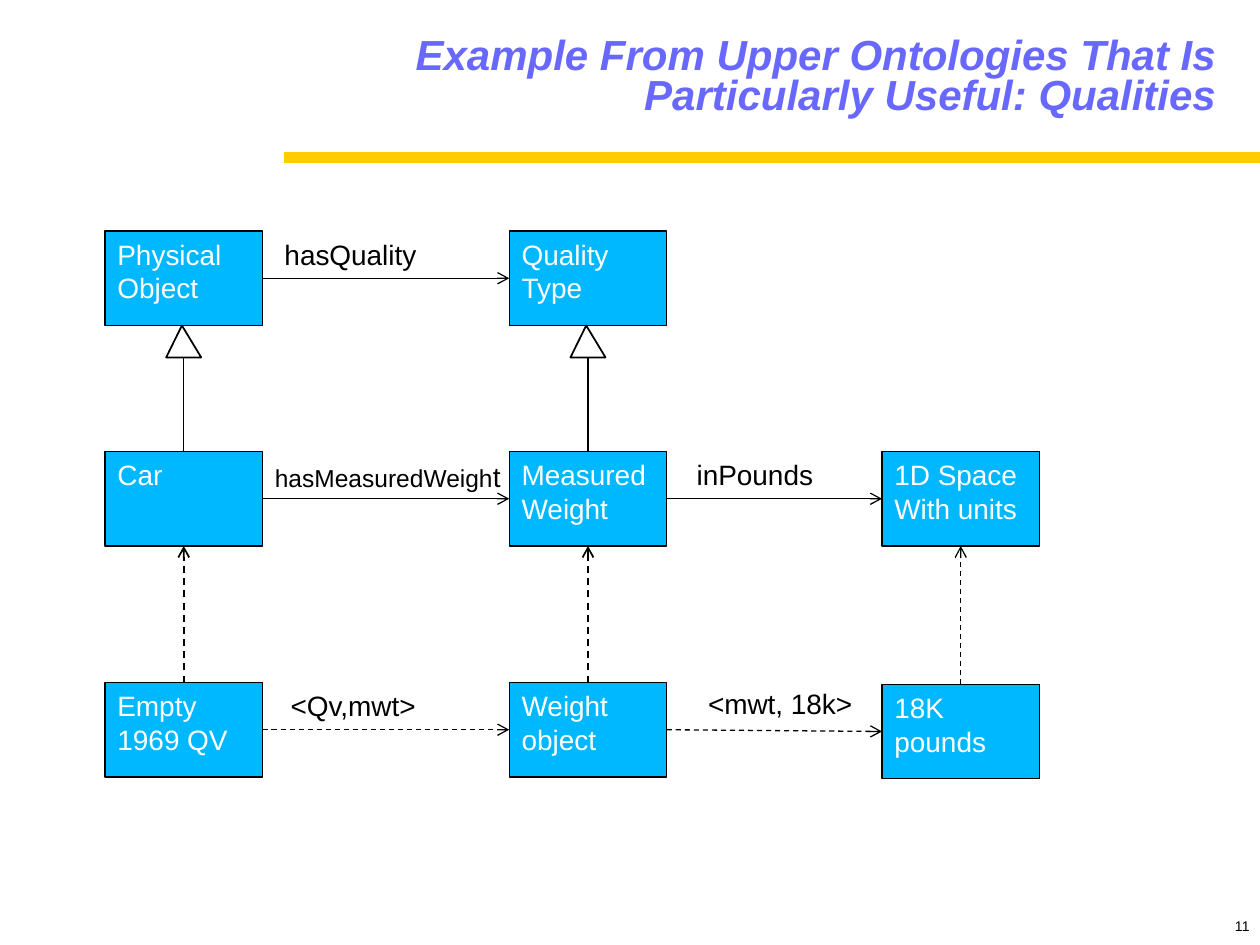
from lxml import etree
from pptx import Presentation
from pptx import util as u
from pptx.dml import color
from pptx.enum import dml, shapes, text
from pptx.oxml import ns

Pt = u.Pt
BOX_W, BOX_H = 90, 54
COLS = (0, 231, 444)
ROWS = (0, 126, 258)
BOXES = {
    (0, 0): "Physical Object",
    (0, 1): "Quality\nType",
    (1, 0): "Car",
    (1, 1): "Measured\nWeight",
    (1, 2): "1D Space\nWith units",
    (2, 0): "Empty 1969 QV",
    (2, 1): "Weight object",
    (2, 2): "18K pounds",
}
LABELS = [
    (95.5, 0, 91, [("hasQuality", 16)]),
    (90, 127, 144, [("hasMeasuredWeigh", 14), ("t", 16)]),
    (331, 126, 81, [("inPounds", 16)]),
    (99, 258, 89, [("<Qv,mwt>", 16)]),
    (337.5, 257, 101.5, [("<mwt, 18k>", 16)]),
]


def rgb(value):
    return color.RGBColor.from_string(value)


def write(p, content, size=16, fill="000000", bold=False, italic=False):
    r = p.add_run()
    r.text = content
    r.font.name = "Arial"
    r.font.size = Pt(size)
    r.font.bold = bold
    r.font.italic = italic
    r.font.color.rgb = rgb(fill)


def add_frame(s, x, y, w, h, wrap=True, anchor=text.MSO_ANCHOR.TOP):
    tf = s.shapes.add_textbox(Pt(x), Pt(y), Pt(w), Pt(h)).text_frame
    tf.word_wrap = wrap
    tf.vertical_anchor = anchor
    return tf


def add_line(s, start, end, width=0.75, stroke="000000", dash=False, arrow=False):
    points = [Pt(v) for v in (*start, *end)]
    sp = s.shapes.add_connector(shapes.MSO_CONNECTOR.STRAIGHT, *points)
    sp.line.width = Pt(width)
    sp.line.color.rgb = rgb(stroke)
    if dash:
        sp.line.dash_style = dml.MSO_LINE.DASH
    if arrow:
        tail = etree.SubElement(sp.line._get_or_add_ln(), ns.qn("a:tailEnd"))
        tail.set("type", "arrow")
    etree.SubElement(sp._element.spPr, ns.qn("a:effectLst"))


def style(sp, fill, width):
    sp.shadow.inherit = False
    sp.fill.solid()
    sp.fill.fore_color.rgb = rgb(fill)
    sp.line.color.rgb = rgb("000000")
    sp.line.width = Pt(width)


def add_box(s, x, y, content):
    sp = s.shapes.add_shape(shapes.MSO_SHAPE.RECTANGLE, Pt(x), Pt(y), Pt(BOX_W), Pt(BOX_H))
    style(sp, "00B8FF", 0.75)
    tf = sp.text_frame
    tf.word_wrap = True
    tf.vertical_anchor = text.MSO_ANCHOR.TOP
    for i, part in enumerate(content.split("\n")):
        p = tf.paragraphs[0] if i == 0 else tf.add_paragraph()
        p.alignment = text.PP_ALIGN.LEFT
        write(p, part, fill="FFFFFF")


def add_inheritance(s, x, top, bottom):
    base = top + 18.25
    add_line(s, (x, base), (x, bottom))
    fb = s.shapes.build_freeform(Pt(x - 1), Pt(top))
    fb.add_line_segments([(Pt(x + 10), Pt(base)), (Pt(x - 10), Pt(base))], close=True)
    style(fb.convert_to_shape(), "FFFFFF", 1)


def add_header(s, x, y, w, h):
    add_line(s, (x + w + 18, y + 84), (x, y + 84), width=6, stroke="FFCC00")
    p = add_frame(s, x, y, w, h, anchor=text.MSO_ANCHOR.MIDDLE).paragraphs[0]
    p.alignment = text.PP_ALIGN.RIGHT
    p.line_spacing = 0.8
    write(p, "Example From Upper Ontologies That Is Particularly Useful: Qualities",
          size=24, fill="6868FF", bold=True, italic=True)


def add_diagram(s, x, y):
    at = {(r, c): (x + COLS[c], y + ROWS[r] + (r == c == 2)) for r, c in BOXES}
    for key, content in BOXES.items():
        add_box(s, *at[key], content)
    for (r, c), (left, top) in at.items():
        mid = left + BOX_W / 2
        if (r, c + 1) in at:
            end_x, end_y = at[r, c + 1]
            add_line(s, (left + BOX_W, top + BOX_H / 2), (end_x, end_y + BOX_H / 2),
                     dash=r == 2, arrow=True)
        if r == 2:
            add_line(s, (mid, top), (mid, at[1, c][1] + BOX_H),
                     width=0.75 if c == 2 else 1, dash=True, arrow=True)
        if r == 0:
            add_inheritance(s, mid, top + BOX_H, at[1, c][1])
    for dx, dy, w, runs in LABELS:
        tf = add_frame(s, x + dx, y + dy, w, 26.5, wrap=False)
        tf.auto_size = text.MSO_AUTO_SIZE.SHAPE_TO_FIT_TEXT
        for content, size in runs:
            write(tf.paragraphs[0], content, size=size)


def add_page_number(s, x, y, w, h):
    tf = add_frame(s, x, y, w, h, anchor=text.MSO_ANCHOR.BOTTOM)
    tf.margin_left = tf.margin_right = tf.margin_top = tf.margin_bottom = 0
    tf.paragraphs[0].alignment = text.PP_ALIGN.RIGHT
    write(tf.paragraphs[0], "11", size=8)


def main():
    prs = Presentation()
    prs.slide_width, prs.slide_height = Pt(720), Pt(540)
    s = prs.slides.add_slide(prs.slide_layouts[6])
    add_header(s, 162, 6, 540, 78)
    add_diagram(s, 60, 132)
    add_page_number(s, 690, 516, 24, 18)
    prs.save("out.pptx")


if __name__ == "__main__":
    main()
